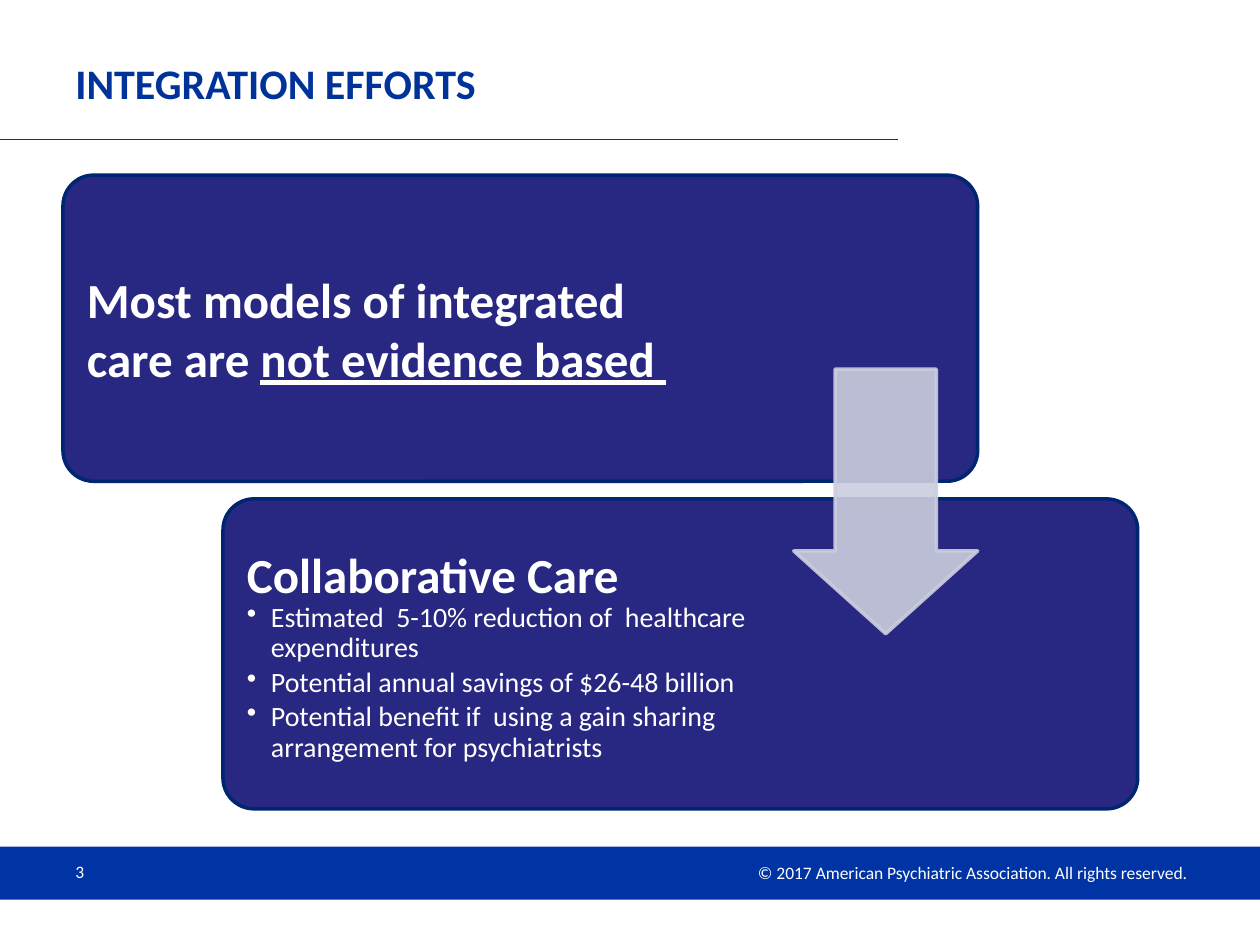
from lxml import etree
from pptx import Presentation
from pptx.dml.color import RGBColor
from pptx.enum.shapes import MSO_CONNECTOR as Connector, MSO_SHAPE as Preset
from pptx.enum.text import MSO_ANCHOR as Anchor, PP_ALIGN as Align
from pptx.oxml.ns import qn
from pptx.util import Inches, Pt

FONT = "Calibri"
WHITE, TITLE_BLUE, BAND_BLUE = "FFFFFF", "003399", "0033A3"
CARD_FILL, CARD_EDGE, ARROW_GREY = "282781", "002671", "CCCEDE"

SAVINGS = [
    "Estimated  5-10% reduction of  healthcare expenditures",
    "Potential annual savings of $26-48 billion",
    "Potential benefit if  using a gain sharing arrangement for psychiatrists",
]


def color(hex_string):
    return RGBColor.from_string(hex_string)


def set_font(paragraph, size, hex_string=WHITE, bold=False):
    font = paragraph.font
    font.name, font.size, font.bold = FONT, Pt(size), bold
    font.color.rgb = color(hex_string)


def add_block(slide, preset, box, fill, edge=None, adjustments=()):
    block = slide.shapes.add_shape(preset, *map(Inches, box))
    block.shadow.inherit = False
    for index, value in enumerate(adjustments):
        block.adjustments[index] = value
    block.fill.solid()
    block.fill.fore_color.rgb = color(fill)
    if edge:
        block.line.color.rgb = color(edge)
        block.line.width = Pt(2)
    else:
        block.line.fill.background()
    return block


def set_opacity(block, percent):
    """Apply one opacity to the fill and the outline."""
    for rgb in block._element.spPr.iter(qn("a:srgbClr")):
        etree.SubElement(rgb, qn("a:alpha"), val=str(percent * 1000))


def add_rule(slide, y, right, hex_string):
    rule = slide.shapes.add_connector(
        Connector.STRAIGHT, 0, Inches(y), Inches(right), Inches(y))
    rule.line.color.rgb = color(hex_string)
    rule.line.width = Pt(0.75)
    etree.SubElement(rule._element.spPr, qn("a:effectLst"))


def add_frame(slide, box, inset=None):
    """Return the text frame of a wrapped, vertically centred text box."""
    frame = slide.shapes.add_textbox(*map(Inches, box)).text_frame
    frame.word_wrap = True
    frame.vertical_anchor = Anchor.MIDDLE
    if inset:
        frame.margin_left = frame.margin_right = Inches(inset)
        frame.margin_top = frame.margin_bottom = Inches(inset)
    return frame


def add_label(slide, box, text, size, hex_string=WHITE, bold=False, align=Align.LEFT):
    label = add_frame(slide, box).paragraphs[0]
    label.text = text
    label.alignment = align
    set_font(label, size, hex_string, bold)


def add_bullet(frame, text):
    bullet = frame.add_paragraph()
    bullet.text = text
    bullet.level = 1
    bullet.line_spacing = 0.9
    bullet.space_after = Pt(2.4)
    properties = bullet._p.get_or_add_pPr()
    properties.set("marL", str(Inches(0.19)))
    properties.set("indent", str(-Inches(0.19)))
    etree.SubElement(properties, qn("a:buChar"), char="•")
    set_font(bullet, 16)


def add_card(slide, box, text_width):
    """Draw a rounded card and return the text frame on its left part."""
    left, top, _, height = box
    add_block(slide, Preset.ROUNDED_RECTANGLE, box, CARD_FILL, CARD_EDGE, [0.1])
    pad = 0.07
    return add_frame(
        slide, (left + pad, top + pad, text_width, height - 2 * pad), inset=0.12)


def add_footer(slide):
    add_block(slide, Preset.RECTANGLE, (0, 6.72, 10, 0.42), BAND_BLUE)
    add_label(slide, (5.18, 6.79, 4.37, 0.27),
              "© 2017 American Psychiatric Association. All rights reserved. ",
              10, align=Align.RIGHT)
    add_label(slide, (0.5, 6.72, 2.33, 0.4), "3", 10)


def add_models_card(slide):
    claim = add_card(slide, (0.5, 1.39, 7.26, 2.43), 4.93).paragraphs[0]
    claim.add_run().text = "Most models of integrated care are "
    emphasis = claim.add_run()
    emphasis.text = "not evidence based "
    emphasis.font.underline = True
    set_font(claim, 28, bold=True)


def add_collaborative_card(slide):
    frame = add_card(slide, (1.77, 3.96, 7.26, 2.46), 4.38)
    heading = frame.paragraphs[0]
    heading.text = "Collaborative Care"
    set_font(heading, 28, bold=True)
    for saving in SAVINGS:
        add_bullet(frame, saving)


def main():
    deck = Presentation()
    deck.slide_width, deck.slide_height = Inches(10), Inches(7.5)
    slide = deck.slides.add_slide(deck.slide_layouts[6])

    add_footer(slide)
    add_rule(slide, 1.11, 7.13, TITLE_BLUE)
    add_label(slide, (0.5, 0.34, 6.63, 0.64), "INTEGRATION EFFORTS",
              24, TITLE_BLUE, bold=True)
    add_models_card(slide)
    add_collaborative_card(slide)
    arrow = add_block(slide, Preset.DOWN_ARROW, (6.3, 2.93, 1.46, 2.1),
                      ARROW_GREY, ARROW_GREY, [0.55, 0.45])
    set_opacity(arrow, 90)

    deck.save("out.pptx")


if __name__ == "__main__":
    main()
